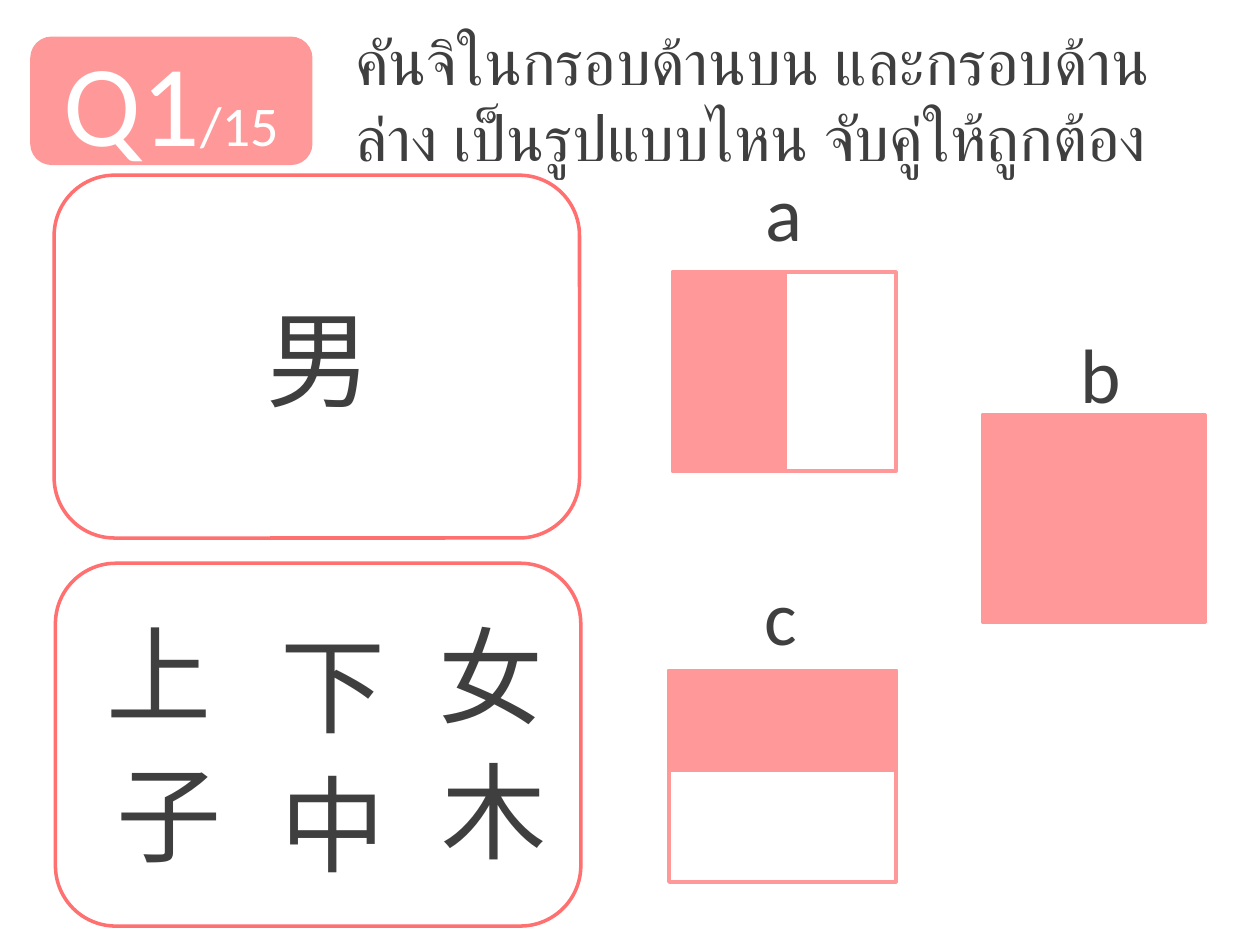
from pptx import Presentation
from pptx.dml.color import RGBColor
from pptx.enum.shapes import MSO_SHAPE
from pptx.enum.text import MSO_ANCHOR, MSO_AUTO_SIZE, PP_ALIGN
from pptx.util import Inches, Pt

PINK = RGBColor(0xFF, 0x99, 0x99)
CORAL = RGBColor(0xFF, 0x70, 0x70)
DARK = RGBColor(0x3F, 0x3F, 0x3F)
WHITE = RGBColor(0xFF, 0xFF, 0xFF)
RECTANGLE = MSO_SHAPE.RECTANGLE
ROUNDED = MSO_SHAPE.ROUNDED_RECTANGLE
TOP, MIDDLE, BOTTOM = MSO_ANCHOR.TOP, MSO_ANCHOR.MIDDLE, MSO_ANCHOR.BOTTOM
LEFT, CENTER = PP_ALIGN.LEFT, PP_ALIGN.CENTER
NO_AUTOFIT = MSO_AUTO_SIZE.NONE
TITLE_ONLY = 5


class QuizSlide:
    """Style and drawing methods for one quiz slide."""

    latin_font = "Calibri"
    question_font = "Roboto"
    line_width = Pt(2)

    def __init__(self, deck):
        self.slide = deck.slides.add_slide(deck.slide_layouts[TITLE_ONLY])
        self.shapes = self.slide.shapes

    def add_text(self, shape, spans, font, color, align=CENTER, anchor=MIDDLE):
        """Fill a shape with one paragraph of (text, size) spans."""
        frame = shape.text_frame
        frame.word_wrap = True
        frame.auto_size = NO_AUTOFIT
        frame.vertical_anchor = anchor
        para = frame.paragraphs[0]
        para.alignment = align
        for text, size in spans:
            span = para.add_run()
            span.text = text
            span.font.name = font
            span.font.size = Pt(size)
            span.font.color.rgb = color

    def title(self, text, left, top, width, height):
        title = self.shapes.title
        title.left, title.top = Inches(left), Inches(top)
        title.width, title.height = Inches(width), Inches(height)
        self.add_text(title, [(text, 36)], self.question_font, DARK, LEFT, TOP)

    def box(self, kind, left, top, width, height, fill=None, line=None, parent=None):
        shapes = parent.shapes if parent else self.shapes
        box = shapes.add_shape(kind, Inches(left), Inches(top),
                               Inches(width), Inches(height))
        box.shadow.inherit = False
        if fill is None:
            box.fill.background()
        else:
            box.fill.solid()
            box.fill.fore_color.rgb = fill
        if line is None:
            box.line.fill.background()
        else:
            box.line.color.rgb = line
            box.line.width = self.line_width
        return box

    def label(self, text, size, font, left, top, width, height,
              anchor=MIDDLE, parent=None):
        shapes = parent.shapes if parent else self.shapes
        label = shapes.add_textbox(Inches(left), Inches(top),
                                   Inches(width), Inches(height))
        self.add_text(label, [(text, size)], font, DARK, CENTER, anchor)

    def kanji(self, text, left, top, width=1.89, height=1.97):
        self.label(text, 60, self.question_font, left, top, width, height)

    def pattern(self, letter, letter_spot, anchor, frame, filled):
        """Group a letter, an outlined frame and its filled part."""
        group = self.shapes.add_group_shape()
        if filled != frame:
            self.box(RECTANGLE, *frame, line=PINK, parent=group)
        self.box(RECTANGLE, *filled, fill=PINK, line=PINK, parent=group)
        self.label(letter, 44, self.latin_font, *letter_spot, 1.77, 0.84,
                   anchor=anchor, parent=group)


def main():
    deck = Presentation()
    deck.slide_width, deck.slide_height = Inches(10), Inches(7.5)
    quiz = QuizSlide(deck)

    # Question number and question
    badge = quiz.box(ROUNDED, 0.24, 0.29, 2.24, 1.02, fill=PINK)
    quiz.add_text(badge, [("Q1", 66), ("/15", 32)], quiz.latin_font, WHITE)
    quiz.title("คันจิในกรอบด้านบน และกรอบด้านล่าง เป็นรูปแบบไหน จับคู่ให้ถูกต้อง",
               2.72, 0.13, 6.85, 1.31)

    # Answer patterns: left half, top half, whole
    quiz.pattern("a", (5.34, 1.25), BOTTOM,
                 (5.34, 2.16, 1.77, 1.58), (5.34, 2.16, 0.89, 1.58))
    quiz.pattern("c", (5.31, 4.46), TOP,
                 (5.31, 5.32, 1.8, 1.68), (5.31, 5.32, 1.8, 0.79))
    whole = (7.8, 3.29, 1.77, 1.65)
    quiz.pattern("b", (7.85, 2.53), BOTTOM, whole, whole)

    # Upper frame
    quiz.box(ROUNDED, 0.43, 1.39, 4.17, 2.88, line=CORAL)
    quiz.kanji("男", 1.59, 1.85)

    # Lower frame
    quiz.box(ROUNDED, 0.44, 4.47, 4.17, 2.88, line=CORAL)
    for text, *place in [
        ("上", 0.32, 4.35), ("下", 1.7, 4.44), ("中", 1.7, 5.54),
        ("女", 2.95, 4.37), ("子", 0.4, 5.46), ("木", 3.2, 5.88, 1.44, 1.09),
    ]:
        quiz.kanji(text, *place)

    deck.save("out.pptx")


if __name__ == "__main__":
    main()
